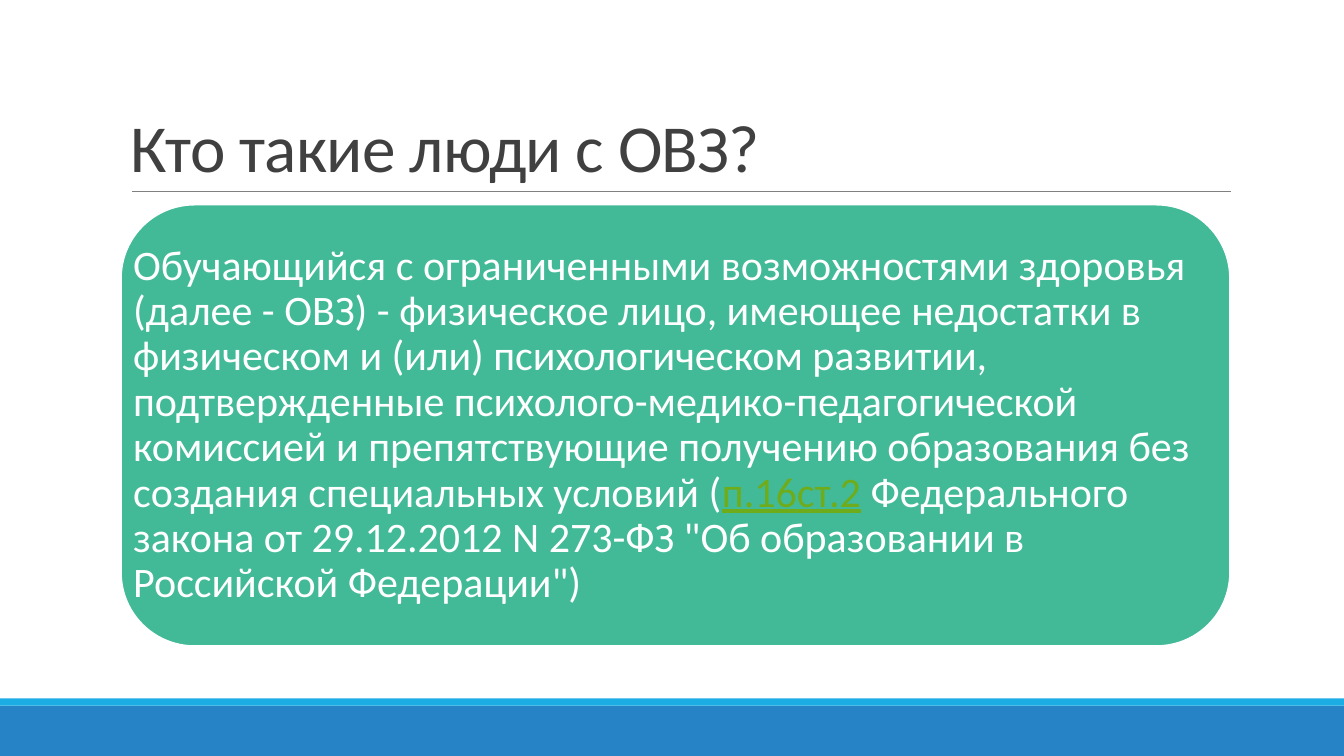
"""Build the slide that explains who people with limited health abilities are."""
from pptx import Presentation
from pptx.dml.color import RGBColor
from pptx.enum.shapes import MSO_CONNECTOR as Line, MSO_SHAPE as Shape
from pptx.enum.text import MSO_ANCHOR as Anchor
from pptx.oxml.ns import qn
from pptx.util import Inches, Pt
from lxml.etree import SubElement

WIDE, HIGH = 13.33, 7.5
FONT = "Calibri"
TITLE = [("Кто такие люди с ОВЗ?", "404040", False)]
BODY = [
    ("Обучающийся с ограниченными возможностями здоровья (далее - ОВЗ) - "
     "физическое лицо, имеющее недостатки в физическом и (или) психологическом "
     "развитии, подтвержденные психолого-медико-педагогической комиссией и "
     "препятствующие получению образования без создания специальных условий (",
     "FFFFFF", False),
    ("п.16ст.2", "6EAC1C", True),
    (" Федерального закона от 29.12.2012 N 273-ФЗ \"Об образовании в "
     "Российской Федерации\")", "FFFFFF", False),
]
HEAD = (1.2, 0.31, 11, 1.59)
CARD = (1.2, 2.03, 11, 4.38)
BANDS = [(0.5, 0.5, "2683C6"), (0.57, 0.07, "1CADE4")]
RULE = (1.31, 1.9, 12.21, 1.9)


def color(code):
    return RGBColor.from_string(code)


def block(slide, kind, place, fill):
    shape = slide.shapes.add_shape(kind, *map(Inches, place))
    shape.shadow.inherit = False
    shape.fill.solid()
    shape.fill.fore_color.rgb = color(fill)
    shape.line.fill.background()
    return shape


def write(slide, place, runs, size, anchor, inset, lead, space=0):
    frame = slide.shapes.add_textbox(*map(Inches, place)).text_frame
    frame.word_wrap = True
    frame.vertical_anchor = anchor
    frame.margin_left = frame.margin_right = Inches(inset[0])
    frame.margin_top = frame.margin_bottom = Inches(inset[1])
    para = frame.paragraphs[0]
    para.line_spacing = lead
    for text, code, under in runs:
        run = para.add_run()
        run.text = text
        font = run.font
        font.name, font.size = FONT, Pt(size)
        font.color.rgb = color(code)
        font.underline = under
        if space:
            run._r.get_or_add_rPr().set("spc", str(space))


def main():
    deck = Presentation()
    deck.slide_width, deck.slide_height = Inches(WIDE), Inches(HIGH)
    slide = deck.slides.add_slide(deck.slide_layouts[6])
    for rise, tall, fill in BANDS:
        block(slide, Shape.RECTANGLE, (0, HIGH - rise, WIDE, tall), fill)
    rule = slide.shapes.add_connector(Line.STRAIGHT, *map(Inches, RULE))
    rule.line.color.rgb = color("808080")
    rule.line.width = Pt(0.5)
    SubElement(rule._element.spPr, qn("a:effectLst"))
    write(slide, HEAD, TITLE, 48, Anchor.BOTTOM, (0.1, 0.05), 0.85, -50)
    card = block(slide, Shape.ROUNDED_RECTANGLE, CARD, "42BA97")
    card.line.color.rgb = color("FFFFFF")
    card.line.width = Pt(1.25)
    write(slide, CARD, BODY, 30, Anchor.MIDDLE, (0.12, 0.12), 0.9)
    deck.save("out.pptx")


if __name__ == "__main__":
    main()
